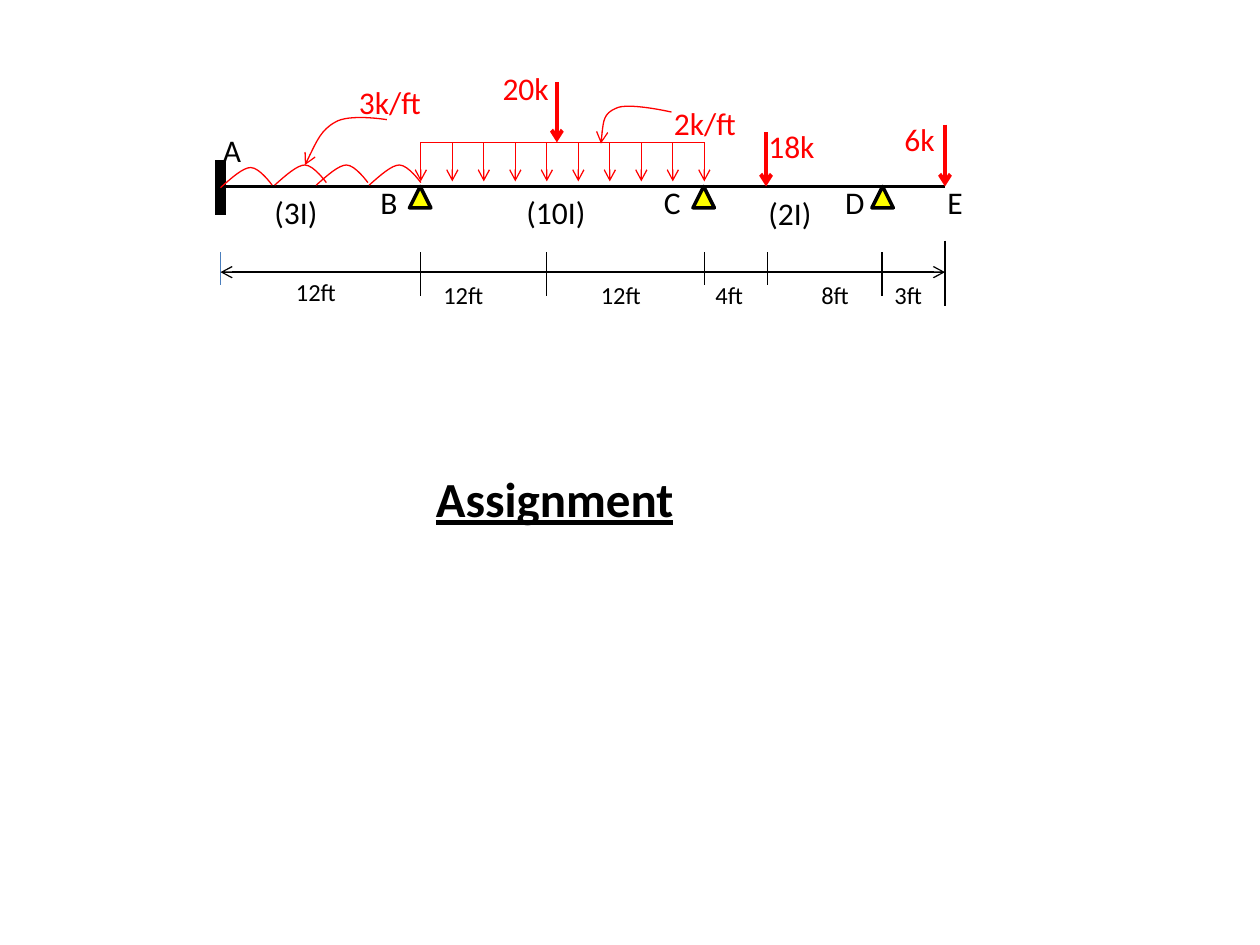
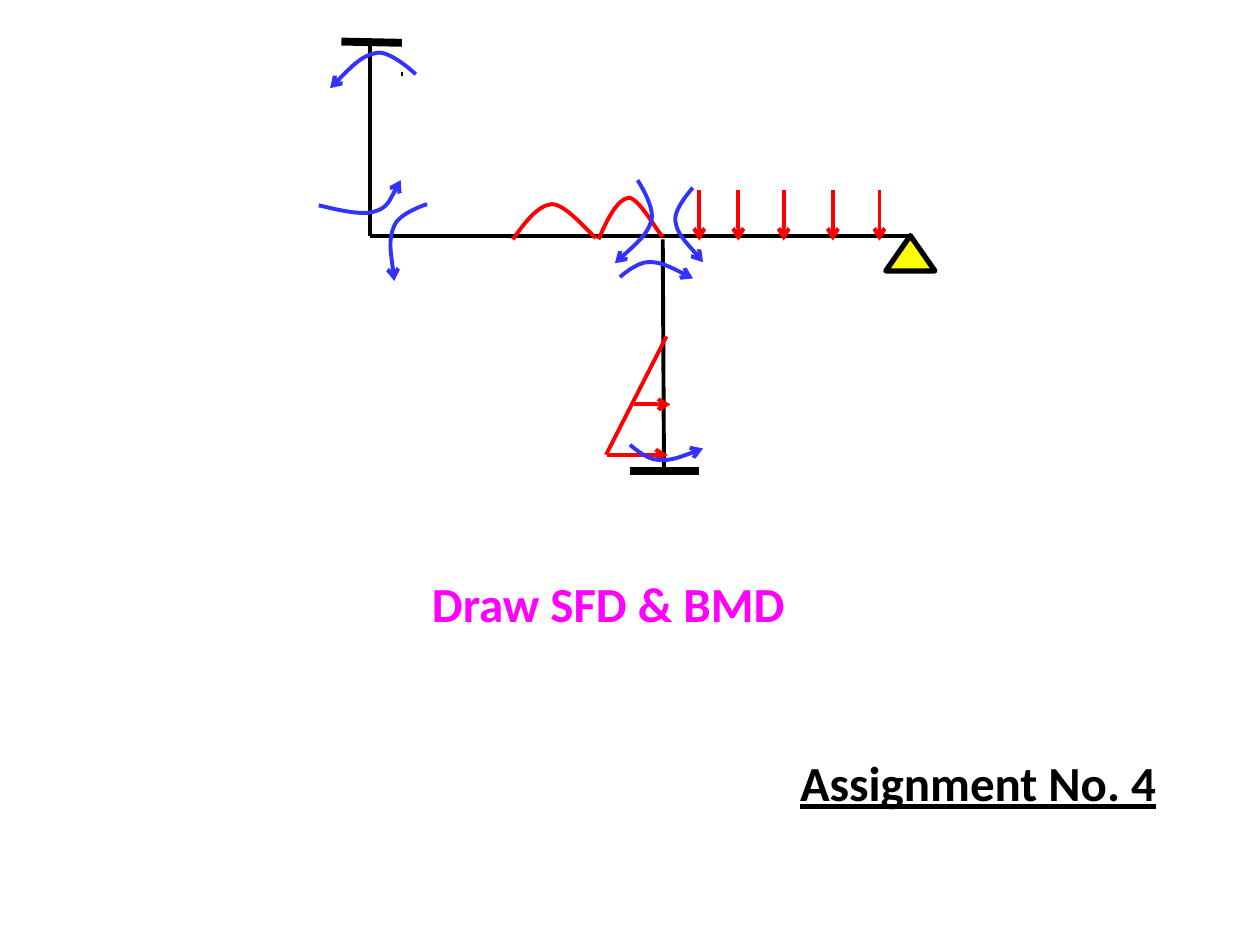
"""Build two slides of structural frame assignments: a loaded beam and a loaded frame."""
from dataclasses import dataclass

from lxml.etree import SubElement
from pptx import Presentation
from pptx.dml.color import RGBColor
from pptx.enum.shapes import MSO_CONNECTOR, MSO_SHAPE
from pptx.enum.text import MSO_ANCHOR, MSO_AUTO_SIZE, PP_ALIGN
from pptx.oxml.ns import qn
from pptx.util import Cm, Pt


@dataclass(frozen=True)
class Theme:
    font: str = "Calibri"
    ink: str = "000000"
    load: str = "FF0000"
    moment: str = "3333FF"
    support: str = "FFFF00"
    task: str = "FF00FF"
    datum: str = "4B7EBC"
    heading_size: int = 28
    label_size: int = 18
    dimension_size: int = 14
    thin: float = 0.75
    thick: float = 2.25


def inches(value):
    return Cm(value * 2.54)


class Sketch:
    def __init__(self, deck, theme):
        self.deck = deck
        self.theme = theme
        self.page = None

    def start_page(self):
        self.page = self.deck.slides.add_slide(self.deck.slide_layouts[5])

    def style_line(self, shape, color, width, arrows):
        shape.line.color.rgb = RGBColor.from_string(color)
        shape.line.width = Pt(width)
        outline = shape._element.spPr.find(qn("a:ln"))
        for arrow in ("head", "tail"):
            if arrow in arrows:
                SubElement(outline, qn(f"a:{arrow}End"), type="arrow")

    def line(self, start, end, color=None, width=None, arrows=()):
        ends = [inches(value) for value in (*start, *end)]
        connector = self.page.shapes.add_connector(MSO_CONNECTOR.STRAIGHT, *ends)
        self.style_line(connector, color or self.theme.ink, width or self.theme.thick, arrows)
        SubElement(connector._element.spPr, qn("a:effectLst"))

    def curve(self, points, color, width, arrows=()):
        spots = [(inches(x), inches(y)) for x, y in points]
        builder = self.page.shapes.build_freeform(*spots[0])
        builder.add_line_segments(spots[1:], close=False)
        shape = builder.convert_to_shape()
        outline = next(shape._element.iter(qn("a:path")))
        for index, segment in enumerate(outline.findall(qn("a:lnTo"))):
            if index % 3 == 0:
                bezier = SubElement(outline, qn("a:cubicBezTo"))
            bezier.append(segment[0])
            outline.remove(segment)
        shape.fill.background()
        shape.shadow.inherit = False
        self.style_line(shape, color, width, arrows)

    def pin_support(self, left, top, width, height, line_width):
        bounds = [inches(value) for value in (left, top, width, height)]
        shape = self.page.shapes.add_shape(MSO_SHAPE.ISOSCELES_TRIANGLE, *bounds)
        shape.fill.solid()
        shape.fill.fore_color.rgb = RGBColor.from_string(self.theme.support)
        shape.shadow.inherit = False
        self.style_line(shape, self.theme.ink, line_width, ())

    def set_text(self, box, text, size, color, bold=False, underline=False):
        frame = box.text_frame
        frame.word_wrap = True
        frame.auto_size = MSO_AUTO_SIZE.SHAPE_TO_FIT_TEXT
        frame.vertical_anchor = MSO_ANCHOR.TOP
        para = frame.paragraphs[0]
        para.text = text
        para.alignment = PP_ALIGN.LEFT
        para.font.name = self.theme.font
        para.font.size = Pt(size)
        para.font.bold = bold
        para.font.underline = underline
        para.font.color.rgb = RGBColor.from_string(color)

    def label(self, text, left, top, width, height=0.4, size=None, color=None, bold=False):
        bounds = [inches(value) for value in (left, top, width, height)]
        box = self.page.shapes.add_textbox(*bounds)
        self.set_text(box, text, size or self.theme.label_size, color or self.theme.ink, bold)

    def heading(self, text, left, top):
        title = self.page.shapes.title
        title.left, title.top = inches(left), inches(top)
        title.width, title.height = inches(3.08), inches(0.57)
        self.set_text(title, text, self.theme.heading_size, self.theme.ink, True, True)


def draw_beam(sketch):
    theme = sketch.theme
    beam_y, load_top, dimension_y = 1.48, 1.13, 2.16
    beam_start, beam_end = 1.75, 7.5
    sketch.start_page()
    sketch.heading("Assignment", 3.36, 3.67)
    sketch.line((beam_start, beam_y), (beam_end, beam_y))
    sketch.line((beam_start, 1.27), (beam_start, 1.71), width=6)
    for left in (3.25, 5.5, 6.92):
        sketch.pin_support(left, beam_y, 0.17, 0.17, 2)

    wave = [(0, 0), (0.09, -0.08), (0.18, -0.16), (0.24, -0.16),
            (0.31, -0.16), (0.41, -0.02), (0.41, -0.02)]
    for left, base in ((1.75, 1.49), (2.18, 1.47), (2.51, 1.47), (2.93, 1.47)):
        sketch.curve([(left + x, base + y) for x, y in wave], theme.load, theme.thin)
    for index in range(10):
        x = 3.34 + 0.25 * index
        sketch.line((x, load_top), (x, 1.44), theme.load, theme.thin, ("tail",))
    sketch.line((3.34, load_top), (5.59, load_top), theme.load, theme.thin)
    for x, top, bottom in ((4.42, 0.65, load_top), (6.08, 1.05, beam_y), (beam_end, 0.99, beam_y)):
        sketch.line((x, top), (x, bottom), theme.load, arrows=("tail",))
    leaders = (
        [(2.42, 1.31), (2.49, 1.17), (2.55, 1.03), (2.66, 0.97),
         (2.77, 0.9), (3.07, 0.95), (3.07, 0.95)],
        [(4.77, 1.14), (4.78, 1.02), (4.79, 0.9), (4.89, 0.86),
         (4.98, 0.81), (5.33, 0.89), (5.33, 0.89)],
    )
    for leader in leaders:
        sketch.curve(leader, theme.load, theme.thin, ("head",))

    loads = (("3k/ft", 2.75, 0.61, 0.83), ("2k/ft", 5.25, 0.78, 0.75), ("18k", 6, 0.96, 0.67),
             ("20k", 3.89, 0.5, 0.67), ("6k", 7.08, 0.9, 0.5))
    for load in loads:
        sketch.label(*load, color=theme.load)
    for text, left, width in (("(3I)", 2.08, 0.58), ("(10I)", 4.08, 0.75), ("(2I)", 6, 0.58)):
        sketch.label(text, left, 1.49 if left == 6 else 1.48, width, 0.42)
    sketch.label("A", 1.67, 0.99, 0.42)
    for joint, left in (("B", 2.92), ("C", 5.17), ("D", 6.61), ("E", 7.42)):
        sketch.label(joint, left, 1.4, 0.42)

    sketch.line((beam_start, 2), (beam_start, 2.26), theme.datum, theme.thin)
    sketch.line((beam_start, dimension_y), (beam_end, dimension_y),
                width=theme.thin, arrows=("head", "tail"))
    ticks = ((3.34, 2, 2.35), (4.34, 2, 2.35), (5.59, 2, 2.26),
             (6.09, 2, 2.26), (7, 2, 2.35), (beam_end, 1.91, 2.43))
    for x, top, bottom in ticks:
        sketch.line((x, top), (x, bottom), width=theme.thin)
    spans = (("12ft", 2.25, 2.15), ("12ft", 3.42, 2.17), ("12ft", 4.67, 2.17),
             ("4ft", 5.58, 2.17), ("8ft", 6.42, 2.17), ("3ft", 7, 2.17))
    for text, left, top in spans:
        sketch.label(text, left, top, 0.67, 0.34, theme.dimension_size)


def draw_frame(sketch):
    theme = sketch.theme
    beam_y = 1.87
    sketch.start_page()
    sketch.heading("Assignment No. 4", 6.25, 5.92)
    members = (((2.94, beam_y), (7.22, beam_y)), ((2.94, 0.34), (2.94, beam_y)),
               ((5.26, 1.9), (5.27, 3.72)))
    for start, end in members:
        sketch.line(start, end)
    for start, end in (((5.55, 3.74), (5, 3.74)), ((2.71, 0.33), (3.19, 0.34))):
        sketch.line(start, end, width=4.5)
    sketch.line((3.19, 0.57), (3.19, 0.6), width=theme.thin)

    waves = (
        [(4.07, 1.9), (4.17, 1.76), (4.27, 1.63), (4.38, 1.62),
         (4.49, 1.62), (4.67, 1.84), (4.73, 1.89)],
        [(4.75, 1.9), (4.82, 1.74), (4.9, 1.58), (4.99, 1.57),
         (5.07, 1.57), (5.21, 1.83), (5.26, 1.88)],
    )
    for wave in waves:
        sketch.curve(wave, theme.load, theme.thick)
    sketch.pin_support(7.03, beam_y, 0.39, 0.28, 3)
    for x in (5.55, 5.86, 6.22, 6.61, 6.98):
        sketch.line((x, 1.51), (x, 1.91), theme.load, arrows=("tail",))
    sketch.line((5.29, 2.67), (4.81, 3.61), theme.load)
    for start, end, y in ((4.82, 5.3, 3.61), (5.03, 5.32, 3.21)):
        sketch.line((start, y), (end, y), theme.load, arrows=("tail",))
    sketch.label("Draw SFD & BMD", 3.33, 4.5, 3.17, 0.57, theme.heading_size, theme.task, True)

    moments = (
        [(2.62, 0.7), (2.75, 0.57), (2.87, 0.44), (2.99, 0.42),
         (3.1, 0.4), (3.3, 0.59), (3.3, 0.59)],
        [(3.18, 1.43), (3.18, 1.43), (3.08, 1.65), (2.97, 1.68),
         (2.87, 1.71), (2.7, 1.67), (2.53, 1.63)],
        [(3.13, 2.23), (3.11, 2.06), (3.08, 1.9), (3.13, 1.79),
         (3.17, 1.69), (3.39, 1.62), (3.39, 1.62)],
        [(4.88, 2.09), (5.01, 1.97), (5.14, 1.86), (5.17, 1.75),
         (5.2, 1.64), (5.06, 1.43), (5.06, 1.43)],
        [(5.5, 2.21), (5.38, 2.15), (5.25, 2.08), (5.15, 2.08),
         (5.05, 2.08), (4.92, 2.2), (4.92, 2.2)],
        [(5.58, 3.56), (5.45, 3.61), (5.32, 3.66), (5.22, 3.65),
         (5.13, 3.65), (5, 3.53), (5, 3.53)],
        [(5.58, 2.08), (5.48, 1.96), (5.37, 1.85), (5.36, 1.75),
         (5.35, 1.65), (5.5, 1.49), (5.5, 1.49)],
    )
    for moment in moments:
        sketch.curve(moment, theme.moment, theme.thick, ("head",))


def main():
    deck = Presentation()
    deck.slide_width, deck.slide_height = Cm(25.4), Cm(19.05)
    sketch = Sketch(deck, Theme())
    draw_beam(sketch)
    draw_frame(sketch)
    deck.save("out.pptx")


if __name__ == "__main__":
    main()
